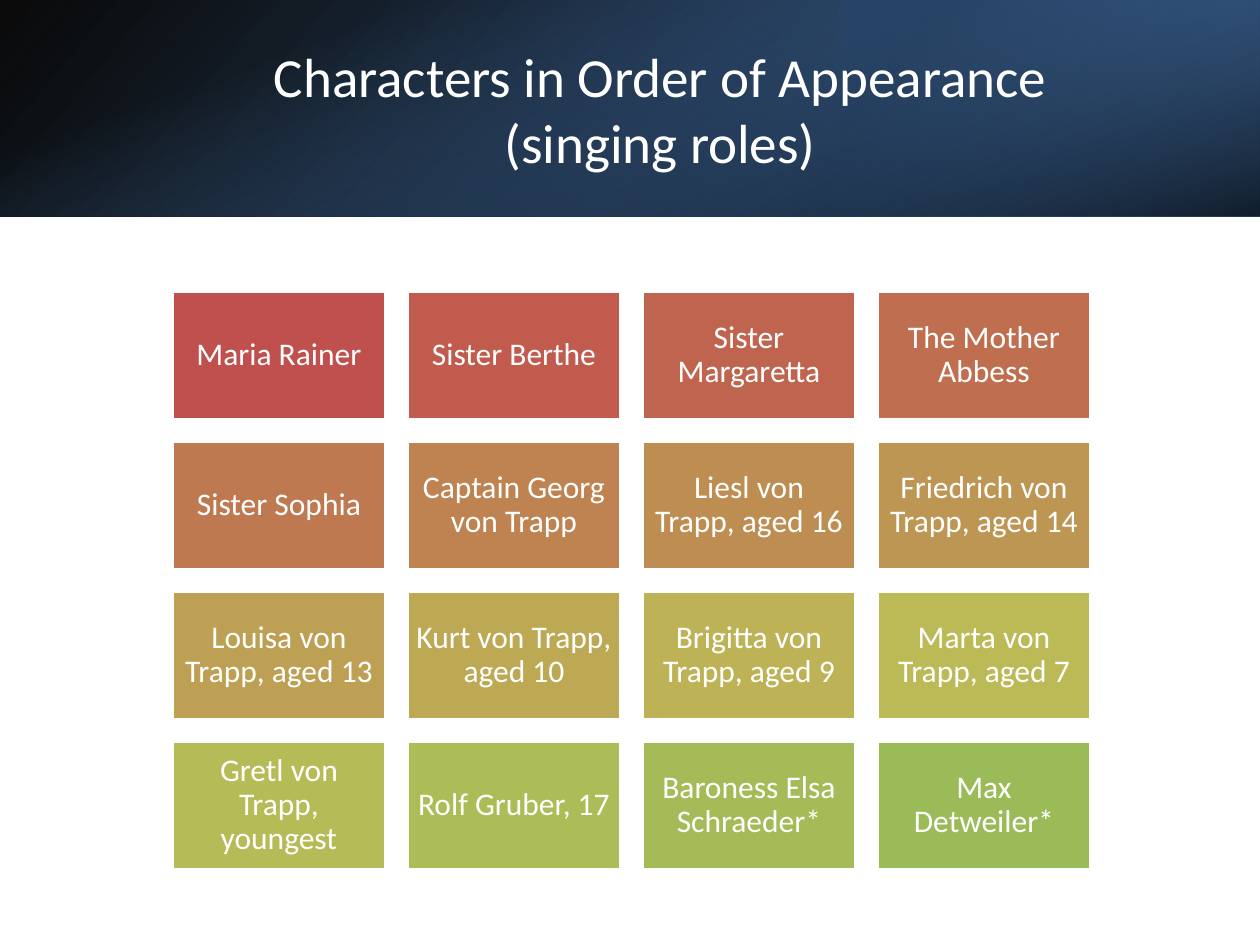
from colorsys import hls_to_rgb, rgb_to_hls
from typing import NamedTuple

from lxml import etree
from pptx import Presentation
from pptx.dml.color import RGBColor
from pptx.enum.shapes import MSO_SHAPE
from pptx.enum.text import MSO_ANCHOR, MSO_AUTO_SIZE, PP_ALIGN
from pptx.oxml.ns import qn
from pptx.util import Emu, Pt

RECTANGLE = MSO_SHAPE.RECTANGLE
MIDDLE = MSO_ANCHOR.MIDDLE
CENTER = PP_ALIGN.CENTER
NO_AUTOFIT = MSO_AUTO_SIZE.NONE

PX_PER_INCH = 126
FONT = "Calibri"
WHITE = RGBColor(0xFF, 0xFF, 0xFF)
BLACK = RGBColor(0x00, 0x00, 0x00)
BLUE = RGBColor(0x4F, 0x81, 0xBD)
DARK_BLUE = RGBColor(0x37, 0x60, 0x92)
NAVY = RGBColor(0x25, 0x40, 0x61)
RED = RGBColor(0xC0, 0x50, 0x4D)
GREEN = RGBColor(0x9B, 0xBB, 0x59)


class Box(NamedTuple):
    left: int
    top: int
    width: int
    height: int


class Stop(NamedTuple):
    position: int  # percent
    color: RGBColor
    opacity: int  # percent


class Band(NamedTuple):
    box: Box
    rotation: int
    flipped: bool
    angle: int  # clockwise degrees
    stops: tuple[Stop, Stop]


BANDS = [
    Band(Box(0, 0, 1260, 217), 0, True, 140,
         (Stop(0, BLACK, 96), Stop(100, DARK_BLUE, 100))),
    Band(Box(840, 0, 420, 217), 180, True, 320,
         (Stop(19, NAVY, 68), Stop(100, BLUE, 79))),
    Band(Box(522, -522, 217, 1260), 90, False, 340,
         (Stop(23, BLUE, 0), Stop(99, BLACK, 74))),
]

TITLE = "Characters in Order of Appearance\v(singing roles)"
TITLE_BOX = Box(141, 48, 1038, 121)

CHARACTERS = [
    "Maria Rainer", "Sister Berthe", "Sister Margaretta", "The Mother Abbess",
    "Sister Sophia", "Captain Georg von Trapp", "Liesl von Trapp, aged 16",
    "Friedrich von Trapp, aged 14", "Louisa von Trapp, aged 13",
    "Kurt von Trapp, aged 10", "Brigitta von Trapp, aged 9",
    "Marta von Trapp, aged 7", "Gretl von Trapp, youngest", "Rolf Gruber, 17",
    "Baroness Elsa Schraeder*", "Max Detweiler*",
]
COLUMNS = 4
FIRST_TILE = Box(172, 291, 214, 129)
COLUMN_PITCH, ROW_PITCH = 235, 150
TILE_INSET = 9


def px(length: int) -> Emu:
    return Emu(round(length * 914400 / PX_PER_INCH))


def set_all(target, values: dict) -> None:
    for name, value in values.items():
        setattr(target, name, value)


def write_text(shape, text: str, size: float, spacing: float, frame_format: dict) -> None:
    frame = shape.text_frame
    frame.text = text
    set_all(frame, {"word_wrap": True, "auto_size": NO_AUTOFIT,
                    "vertical_anchor": MIDDLE, **frame_format})
    paragraph = frame.paragraphs[0]
    set_all(paragraph, {"alignment": CENTER, "line_spacing": spacing})
    for run in paragraph.runs:
        set_all(run.font, {"name": FONT, "size": Pt(size)})
        run.font.color.rgb = WHITE


def add_rectangle(shapes, box: Box):
    rectangle = shapes.add_shape(RECTANGLE, *map(px, box))
    rectangle.shadow.inherit = False
    return rectangle


def add_band(shapes, band: Band) -> None:
    rectangle = add_rectangle(shapes, band.box)
    rectangle.rotation = band.rotation
    if band.flipped:
        rectangle._element.spPr.find(qn("a:xfrm")).set("flipH", "1")
    rectangle.line.fill.background()
    rectangle.fill.gradient()
    rectangle.fill.gradient_angle = 360 - band.angle
    for gradient_stop, stop in zip(rectangle.fill.gradient_stops, band.stops):
        gradient_stop.color.rgb = stop.color
        gradient_stop.position = stop.position / 100
    # Opacity of each stop
    colors = rectangle._element.spPr.iter(qn("a:srgbClr"))
    for color, stop in zip(list(colors), band.stops):
        etree.SubElement(color, qn("a:alpha"), val=str(stop.opacity * 1000))


def blend(start: RGBColor, end: RGBColor, share: float) -> RGBColor:
    """Mix two colours along hue, lightness and saturation."""
    first, last = (rgb_to_hls(*(c / 255 for c in color)) for color in (start, end))
    mixed = (a + (b - a) * share for a, b in zip(first, last))
    return RGBColor(*(round(c * 255) for c in hls_to_rgb(*mixed)))


def add_tile(shapes, index: int, character: str) -> None:
    row, column = divmod(index, COLUMNS)
    box = FIRST_TILE._replace(left=FIRST_TILE.left + column * COLUMN_PITCH,
                              top=FIRST_TILE.top + row * ROW_PITCH)
    tile = add_rectangle(shapes, box)
    tile.fill.solid()
    tile.fill.fore_color.rgb = blend(RED, GREEN, index / (len(CHARACTERS) - 1))
    tile.line.color.rgb = WHITE
    tile.line.width = Pt(2)
    sides = ("left", "top", "right", "bottom")
    write_text(tile, character, 18, 0.9,
               {f"margin_{side}": px(TILE_INSET) for side in sides})


def main() -> None:
    presentation = Presentation()
    presentation.slide_width, presentation.slide_height = px(1260), px(945)
    slide = presentation.slides.add_slide(presentation.slide_layouts[5])
    shapes = slide.shapes

    # Header bands
    for band in BANDS:
        add_band(shapes, band)

    # Title, brought in front of the bands
    title = shapes.title
    set_all(title, dict(zip(Box._fields, map(px, TITLE_BOX))))
    write_text(title, TITLE, 31.5, 1.0, {})
    shapes._spTree.append(title._element)

    # Grid of characters
    grid = shapes.add_group_shape()
    for index, character in enumerate(CHARACTERS):
        add_tile(grid.shapes, index, character)

    presentation.save("out.pptx")


if __name__ == "__main__":
    main()
